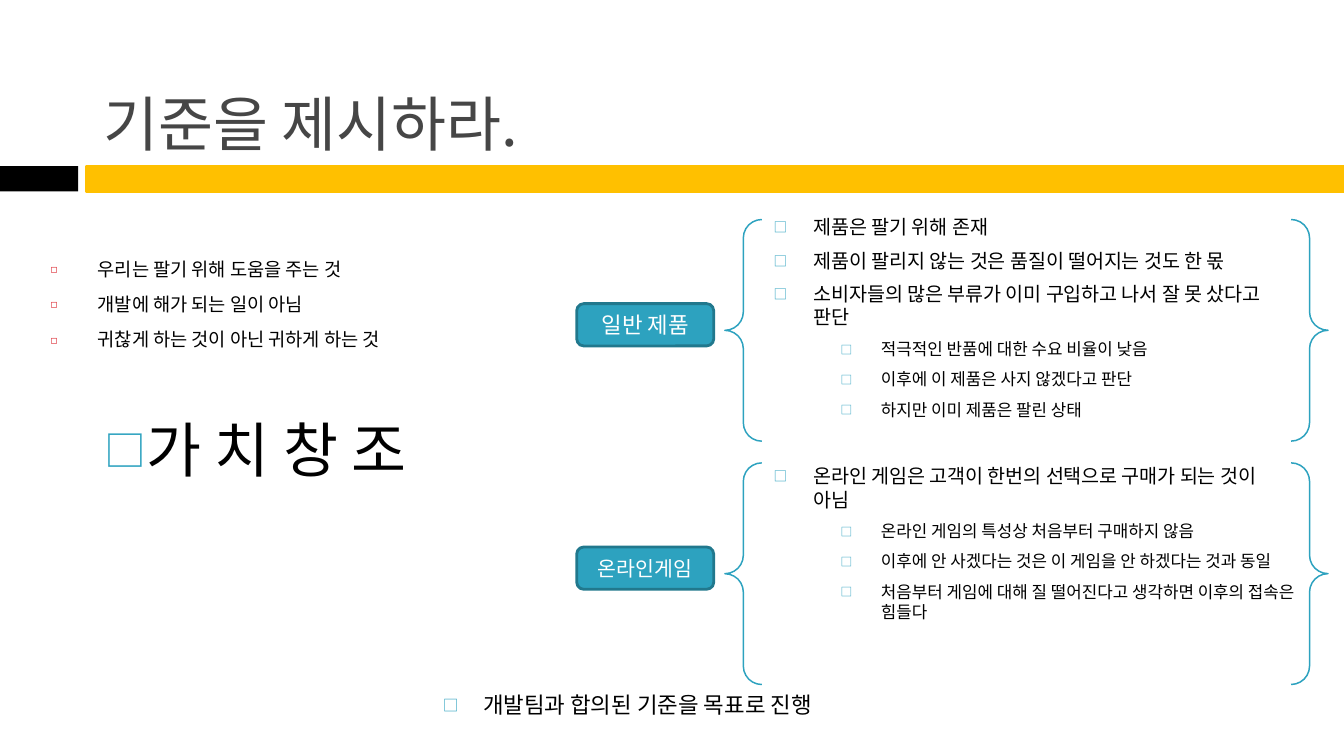
from lxml.etree import SubElement
from pptx import Presentation
from pptx.dml.color import RGBColor
from pptx.enum.shapes import MSO_SHAPE as SHAPE
from pptx.enum.text import MSO_ANCHOR as ANCHOR, MSO_AUTO_SIZE as AUTO, PP_ALIGN as ALIGN
from pptx.oxml.ns import qn
from pptx.util import Cm, Pt

FONT = "Noto Sans CJK KR"
LINE_HEIGHT = 1.19
COLORS = {
    "gold": "FFC000", "black": "000000", "white": "FFFFFF", "title": "464646",
    "teal": "2DA2BF", "dark_teal": "21788D", "red": "DA1F28",
}

# Indents are in cm; sizes and spacing are in points; bullet size is in percent.
SQUARE = {"bullet": "□", "bullet_color": "teal", "bullet_size": 70, "hang": 0.76, "before": 5.5}
STYLES = {
    "intro": {"bullet": "◻", "bullet_color": "red", "bullet_size": 60, "hang": 0.89,
              "before": 7, "level": 0, "indent": 0.89, "size": 10},
    "slogan": {**SQUARE, "level": 1, "indent": 1.78, "size": 32, "before": 33.5},
    "point": {**SQUARE, "level": 2, "indent": 2.03, "size": 10.5},
    "next_point": {**SQUARE, "level": 2, "indent": 2.03, "size": 10.5, "before": 24},
    "detail": {**SQUARE, "level": 3, "indent": 3.3, "size": 9},
    "conclusion": {**SQUARE, "level": 1, "indent": 1.78, "size": 12},
}

GOAL = [
    ("intro", "우리는 팔기 위해 도움을 주는 것"),
    ("intro", "개발에 해가 되는 일이 아님"),
    ("intro", "귀찮게 하는 것이 아닌 귀하게 하는 것"),
    ("slogan", "가 치 창 조"),
]
CRITERIA = [
    ("point", "제품은 팔기 위해 존재"),
    ("point", "제품이 팔리지 않는 것은 품질이 떨어지는 것도 한 몫"),
    ("point", "소비자들의 많은 부류가 이미 구입하고 나서 잘 못 샀다고 \n판단"),
    ("detail", "적극적인 반품에 대한 수요 비율이 낮음"),
    ("detail", "이후에 이 제품은 사지 않겠다고 판단"),
    ("detail", "하지만 이미 제품은 팔린 상태"),
    ("next_point", "온라인 게임은 고객이 한번의 선택으로 구매가 되는 것이 \n아님"),
    ("detail", "온라인 게임의 특성상 처음부터 구매하지 않음"),
    ("detail", "이후에 안 사겠다는 것은 이 게임을 안 하겠다는 것과 동일"),
    ("detail", "처음부터 게임에 대해 질 떨어진다고 생각하면 이후의 접속은 힘들다"),
]
CONCLUSION = [("conclusion", "개발팀과 합의된 기준을 목표로 진행")]
CATEGORIES = [("일반 제품", 12), ("온라인게임", 11)]
CATEGORY_PITCH = 4.6


def rgb(name):
    return RGBColor.from_string(COLORS[name])


def add_text(p, text, size, color):
    """Add one run per line, with line breaks between them."""
    for i, line in enumerate(text.split("\n")):
        if i:
            p.add_line_break()
        r = p.add_run()
        r.text = line
        for name, value in {"name": FONT, "size": Pt(size)}.items():
            setattr(r.font, name, value)
        r.font.color.rgb = rgb(color)


def set_bullet(p, style):
    pPr = p._p.get_or_add_pPr()
    pPr.set("marL", str(Cm(style["indent"])))
    pPr.set("indent", str(-Cm(style["hang"])))
    color = SubElement(pPr, qn("a:buClr"))
    SubElement(color, qn("a:srgbClr"), val=COLORS[style["bullet_color"]])
    SubElement(pPr, qn("a:buSzPct"), val=str(style["bullet_size"] * 1000))
    SubElement(pPr, qn("a:buFont"), typeface=FONT)
    SubElement(pPr, qn("a:buChar"), char=style["bullet"])


def add_bullets(s, box, items):
    tf = s.shapes.add_textbox(*map(Cm, box)).text_frame
    tf.word_wrap = True
    for i, (kind, text) in enumerate(items):
        style = STYLES[kind]
        p = tf.add_paragraph() if i else tf.paragraphs[0]
        set_bullet(p, style)
        spacing = {
            "level": style["level"],
            "space_before": Pt(style["before"] if i else 0),
            "line_spacing": Pt(round(style["size"] * LINE_HEIGHT, 1)),
        }
        for name, value in spacing.items():
            setattr(p, name, value)
        add_text(p, text, style["size"], "black")


def add_shape(s, kind, box, fill=None, line=None, width=1.5):
    sp = s.shapes.add_shape(kind, *map(Cm, box))
    sp.shadow.inherit = False
    if fill:
        sp.fill.solid()
        sp.fill.fore_color.rgb = rgb(fill)
    else:
        sp.fill.background()
    if line:
        sp.line.color.rgb = rgb(line)
        sp.line.width = Pt(width)
    else:
        sp.line.fill.background()
    return sp


def set_title(s, text):
    sp = s.shapes.title
    box = {"left": 1.7, "top": 0.33, "width": 22.66, "height": 2.79}
    for name, value in box.items():
        setattr(sp, name, Cm(value))
    tf = sp.text_frame
    tf.auto_size = AUTO.NONE
    tf.vertical_anchor = ANCHOR.BOTTOM
    p = tf.paragraphs[0]
    p.alignment = ALIGN.LEFT
    p.line_spacing = Pt(round(32 * LINE_HEIGHT, 1))
    add_text(p, text, 32, "title")


def add_category(s, row, label, size):
    """Add a label button and the braces around its criteria."""
    offset = row * CATEGORY_PITCH
    add_shape(s, SHAPE.DOUBLE_BRACE, (13.7, 4.15 + offset, 11.4, 4.19), line="teal", width=0.79)
    button = add_shape(s, SHAPE.ROUNDED_RECTANGLE, (10.9, 5.74 + offset, 2.59, 0.8),
                       "teal", "dark_teal")
    tf = button.text_frame
    tf.vertical_anchor = ANCHOR.MIDDLE
    p = tf.paragraphs[0]
    p.alignment = ALIGN.CENTER
    add_text(p, label, size, "white")


def main():
    prs = Presentation()
    prs.slide_width, prs.slide_height = Cm(25.4), Cm(14.29)
    s = prs.slides.add_slide(prs.slide_layouts[5])

    add_shape(s, SHAPE.RECTANGLE, (1.64, 3.14, 23.76, 0.49), "gold", "gold")
    add_shape(s, SHAPE.RECTANGLE, (0, 3.14, 1.48, 0.48), "black")
    set_title(s, "기준을 제시하라.")
    add_bullets(s, (0.71, 4.75, 10.8, 6.88), GOAL)
    add_bullets(s, (13.1, 3.94, 11.81, 9.4), CRITERIA)
    for row, (label, size) in enumerate(CATEGORIES):
        add_category(s, row, label, size)
    add_bullets(s, (7.1, 12.95, 10.8, 0.91), CONCLUSION)

    prs.save("out.pptx")


if __name__ == "__main__":
    main()
